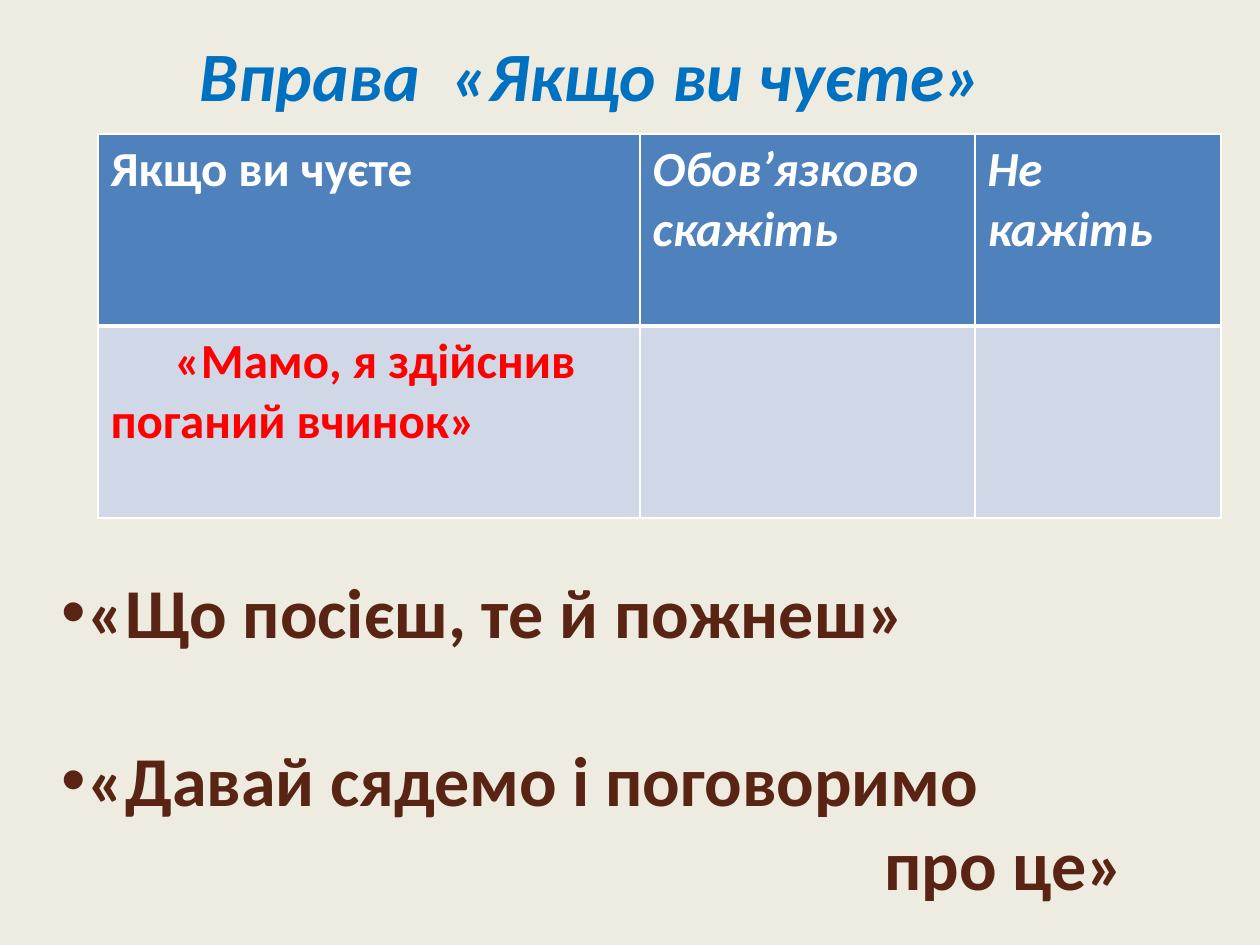
from lxml import etree
from pptx import Presentation
from pptx import util as u
from pptx.dml.color import RGBColor
from pptx.enum import text
from pptx.oxml import ns

SCALE = 914400 / 126
WHITE, BLUE, PALE = "FFFFFF", "4F81BD", "D0D8E8"


def px(n):
    return u.Emu(round(n * SCALE))


def hue(code):
    return RGBColor.from_string(code)


def sub(node, tag, **attrs):
    return etree.SubElement(node, ns.qn("a:" + tag), {k: str(v) for k, v in attrs.items()})


def style(para, size, color, italic=False):
    font = para.font
    font.name, font.size, font.color.rgb = "Calibri", u.Pt(size), hue(color)
    font.bold, font.italic = True, italic


def indent(para, left, first=0):
    props = para._p.get_or_add_pPr()
    props.set("marL", str(px(left)))
    props.set("indent", str(px(first)))
    return props


def frame(slide, box):
    tf = slide.shapes.add_textbox(*map(px, box)).text_frame
    tf.word_wrap = True
    tf.vertical_anchor = text.MSO_ANCHOR.MIDDLE
    return tf


def title(slide, box):
    tf = frame(slide, box)
    tf.margin_left = px(137)
    para = tf.paragraphs[0]
    para.text = "Вправа\t«Якщо ви чуєте»"
    # The tab stop sets the gap between the two parts
    stops = sub(indent(para, 0), "tabLst")
    sub(stops, "tab", pos=px(332), algn="l")
    style(para, 39.6, "0070C0", True)


def border(cell, bottom):
    props = cell._tc.get_or_add_tcPr()
    for spot, (side, width) in enumerate(zip("LRTB", (1, 1, 1, bottom))):
        line = sub(props, "ln" + side, w=u.Pt(width))
        sub(sub(line, "solidFill"), "srgbClr", val=WHITE)
        props.insert(spot, line)


def table(slide, box, cols, rows):
    grid = slide.shapes.add_table(len(rows), len(cols), *map(px, box)).table
    for col, width in zip(grid.columns, cols):
        col.width = px(width)
    for r, words in enumerate(rows):
        grid.rows[r].height = px(box[3] // len(rows))
        for c, word in enumerate(words):
            cell = grid.cell(r, c)
            cell.fill.solid()
            cell.fill.fore_color.rgb = hue(PALE if r else BLUE)
            border(cell, 1 if r else 3)
            para = cell.text_frame.paragraphs[0]
            para.text = word
            style(para, 28, "FF0000" if r else WHITE, r == 0 and c > 0)
            if r and word:
                indent(para, 0, 64)


def sayings(slide, box, lines):
    tf = frame(slide, box)
    for i, (words, bullet, left, space) in enumerate(lines):
        para = tf.add_paragraph() if i else tf.paragraphs[0]
        para.text = words
        para.space_before = u.Pt(space)
        style(para, 40, "592413")
        props = indent(para, left, -left if bullet else 0)
        if bullet:
            sub(props, "buFont", typeface="Arial")
            sub(props, "buChar", char="•")
            # Bullet marks come before the default run style
            props.append(props.find(ns.qn("a:defRPr")))


def main():
    deck = Presentation()
    deck.slide_width, deck.slide_height = px(1260), px(945)
    slide = deck.slides.add_slide(deck.slide_layouts[6])
    slide.background.fill.solid()
    slide.background.fill.fore_color.rgb = hue("EEECE1")

    title(slide, (63, 38, 1134, 71))
    table(slide, (98, 134, 1123, 384), (542, 335, 246), [
        ("Якщо ви чуєте", "Обов’язково скажіть", "Не кажіть"),
        ("«Мамо, я здійснив поганий вчинок»", "", ""),
    ])
    # Words, bullet, left indent in px, space before in points
    sayings(slide, (49, 561, 1182, 352), [
        ("«Що посієш, те й пожнеш»", True, 26, 0),
        ("«Давай сядемо і поговоримо", True, 26, 48),
        ("про це»", False, 823, 0),
    ])
    deck.save("out.pptx")


if __name__ == "__main__":
    main()
